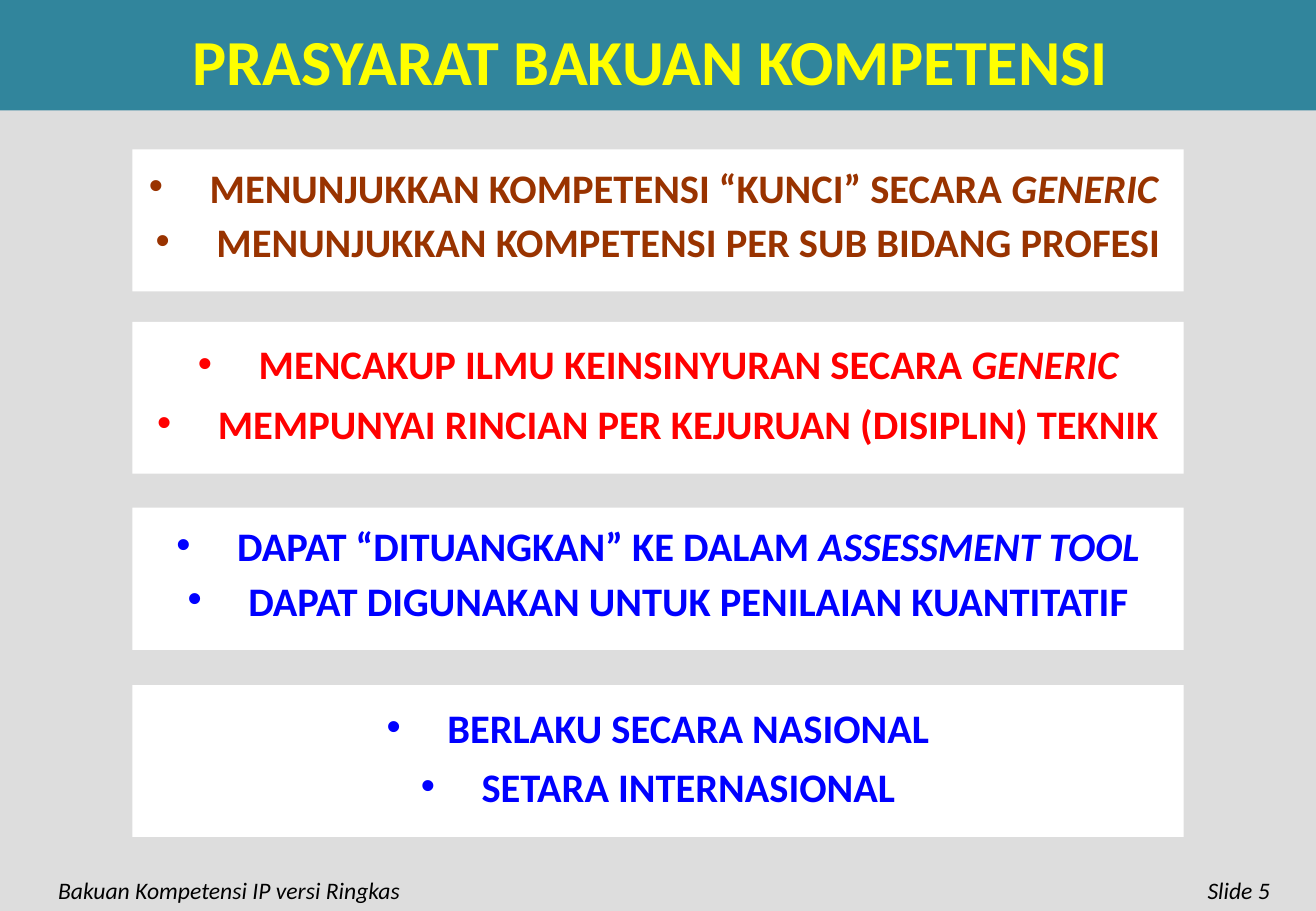
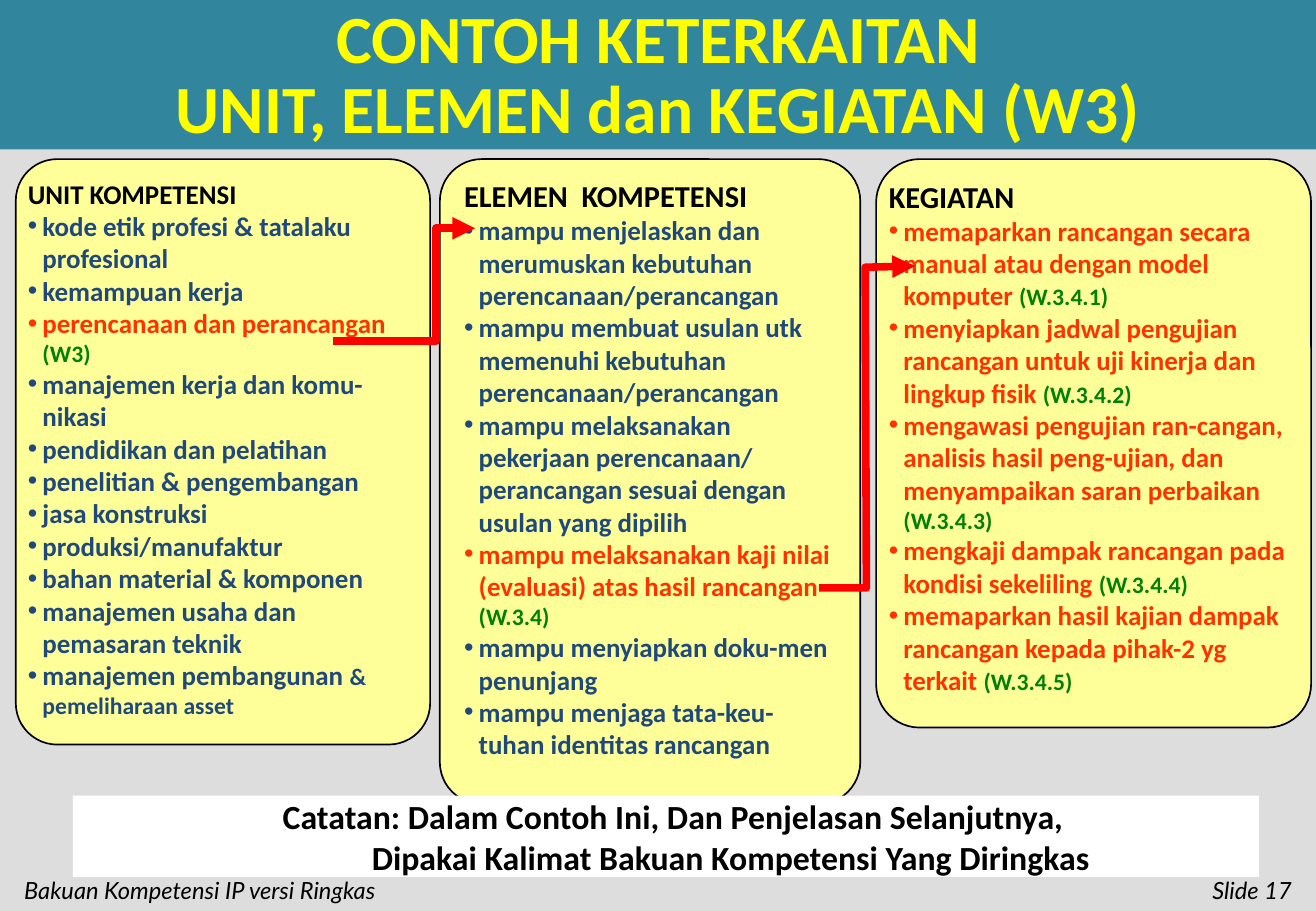
from pptx import Presentation
from pptx.dml.color import RGBColor
from pptx.enum.shapes import MSO_SHAPE as Shape
from pptx.enum.text import MSO_ANCHOR as Anchor, MSO_AUTO_SIZE as AutoSize, PP_ALIGN as Align
from pptx.oxml.ns import qn
from pptx.util import Inches, Pt
from lxml import etree

WIDTH, HEIGHT = 10.83, 7.5
COLORS = dict(
    ground="DDDDDD", band="31859C", title="FFFF00", white="FFFFFF", black="000000",
    brown="993300", red="FF0000", blue="0000FF", card="FFFF99",
    navy="1F497D", orange="FF3300", green="008000",
)
FOOTER = "Bakuan Kompetensi IP versi Ringkas"

# Content: a run is (text, format); a paragraph is a list of runs
ITALIC = dict(italic=True)
CODE = dict(size=14, color="green")
FOCUS = dict(color="orange")

# top, height, line spacing, colour, paragraphs
REQUIREMENTS = [
    (1.23, 1.17, 0.7, "brown", [
        [("MENUNJUKKAN KOMPETENSI “KUNCI” SECARA ", {}), ("GENERIC ", ITALIC)],
        [("MENUNJUKKAN KOMPETENSI PER SUB BIDANG PROFESI", {})]]),
    (2.65, 1.25, 0.8, "red", [
        [("MENCAKUP ILMU KEINSINYURAN SECARA ", {}), ("GENERIC", ITALIC)],
        [("MEMPUNYAI RINCIAN PER KEJURUAN (DISIPLIN) TEKNIK", {})]]),
    (4.18, 1.17, 0.7, "blue", [
        [("DAPAT “DITUANGKAN” KE DALAM ", {}), ("ASSESSMENT TOOL", ITALIC)],
        [("DAPAT DIGUNAKAN UNTUK PENILAIAN KUANTITATIF", {})]]),
    (5.64, 1.25, 0.8, "blue", [
        [("BERLAKU SECARA NASIONAL", {})],
        [("SETARA INTERNASIONAL", {})]]),
]

UNITS = [
    "kode etik profesi & tatalaku profesional",
    "kemampuan kerja",
    [("perencanaan dan perancangan ", FOCUS), ("(W3)", CODE)],
    "manajemen kerja dan komu-nikasi",
    "pendidikan dan pelatihan",
    "penelitian & pengembangan",
    "jasa konstruksi",
    "produksi/manufaktur",
    "bahan material & komponen",
    "manajemen usaha dan pemasaran teknik",
    [("manajemen pembangunan ", {}), ("& pemeliharaan asset", dict(size=14))],
]
ELEMENTS = [
    "mampu menjelaskan dan merumuskan kebutuhan perencanaan/perancangan",
    "mampu membuat usulan utk memenuhi kebutuhan perencanaan/perancangan",
    "mampu melaksanakan pekerjaan perencanaan/ perancangan sesuai dengan usulan yang dipilih",
    [("mampu melaksanakan kaji nilai (evaluasi) atas hasil rancangan ", FOCUS),
     ("(W.3.4)", CODE)],
    "mampu menyiapkan doku-men penunjang",
    "mampu menjaga tata-keu-tuhan identitas rancangan",
]
ACTIVITIES = [
    [(activity + " ", FOCUS), (f"(W.3.4.{number})", CODE)]
    for number, activity in enumerate([
        "memaparkan rancangan secara manual atau dengan model komputer",
        "menyiapkan jadwal pengujian rancangan untuk uji kinerja dan lingkup fisik",
        "mengawasi pengujian ran-cangan, analisis hasil peng-ujian, dan "
        "menyampaikan saran perbaikan",
        "mengkaji dampak rancangan pada kondisi sekeliling",
        "memaparkan hasil kajian dampak rancangan kepada pihak-2 yg terkait",
    ], 1)
]
# heading, heading size, left, width, height, side inset, items
CARD_TOP = 1.31
CARDS = [
    ("UNIT KOMPETENSI", 16, 0.13, 3.41, 4.82, 0, UNITS),
    ("ELEMEN  KOMPETENSI", 18, 3.62, 3.46, 5.31, 0.1, ELEMENTS),
    ("KEGIATAN", 18, 7.21, 3.58, 4.68, 0, ACTIVITIES),
]
LINKS = [
    [(2.74, 2.81), (3.59, 2.81), (3.59, 1.88), (3.91, 1.88)],
    [(6.74, 4.84), (7.13, 4.84), (7.12, 2.2), (7.53, 2.19)],
]
# text, left indent
NOTE = [
    ("Catatan: Dalam Contoh Ini, Dan Penjelasan Selanjutnya,", 0.12),
    ("Dipakai Kalimat Bakuan Kompetensi Yang Diringkas", 1.07),
]


def rgb(name):
    return RGBColor.from_string(COLORS[name])


def write(frame, paragraphs, size, color="black", font="Calibri", bold=False, italic=False,
          align=Align.LEFT, spacing=None, before=0, bullet=False, hang=0,
          anchor=Anchor.TOP, inset=(0.1, 0.05, 0.1, 0.05)):
    """Append paragraphs, each a string or a list of (text, format) runs."""
    frame.word_wrap, frame.auto_size = True, AutoSize.NONE
    frame.vertical_anchor = anchor
    (frame.margin_left, frame.margin_top,
     frame.margin_right, frame.margin_bottom) = map(Inches, inset)
    for runs in paragraphs:
        paragraph = frame.paragraphs[-1]
        if paragraph.runs:
            paragraph = frame.add_paragraph()
        paragraph.alignment = align
        paragraph.space_before = Pt(before)
        if spacing:
            paragraph.line_spacing = spacing
        layout = paragraph._p.get_or_add_pPr()
        layout.set("marL", str(Inches(hang)))
        layout.set("indent", str(-Inches(hang) if bullet or before == 0 else 0))
        if bullet:
            etree.SubElement(layout, qn("a:buFont")).set("typeface", "Arial")
            etree.SubElement(layout, qn("a:buChar")).set("char", "•")
        for text, style in [(runs, {})] if isinstance(runs, str) else runs:
            run = paragraph.add_run()
            run.text = text
            run.font.name = font
            run.font.size = Pt(style.get("size", size))
            run.font.bold = bold
            run.font.italic = style.get("italic", italic)
            run.font.color.rgb = rgb(style.get("color", color))


def panel(slide, kind, box, fill, line=None):
    shape = slide.shapes.add_shape(kind, *map(Inches, box))
    shape.shadow.inherit = False
    shape.fill.solid()
    shape.fill.fore_color.rgb = rgb(fill)
    if line:
        shape.line.color.rgb = rgb(line)
        shape.line.width = Pt(1)
    else:
        shape.line.fill.background()
    return shape


def start_slide(prs, title, size, spacing, band, title_top, title_height,
                number, margin, footer_font):
    """Add a slide with its band, title and footers."""
    slide = prs.slides.add_slide(prs.slide_layouts[5])
    strip = panel(slide, Shape.RECTANGLE, (0, 0, WIDTH, band), "band")
    slide.shapes.element.insert(2, strip.element)
    heading = slide.shapes.title
    heading.left, heading.top, heading.width, heading.height = map(
        Inches, (0, title_top, WIDTH, title_height))
    write(heading.text_frame, title, size, "title", bold=True, align=Align.CENTER,
          spacing=spacing, anchor=Anchor.MIDDLE, inset=(0, 0, 0, 0.16))
    number_width = 1.5
    for text, left, width, align in [
            (FOOTER, margin, 3.75, Align.LEFT),
            (f"Slide {number}", WIDTH - margin - number_width + 0.1 * (margin > 0.2),
             number_width, Align.RIGHT)]:
        box = slide.shapes.add_textbox(*map(Inches, (left, 7.16, width, 0.5)))
        write(box.text_frame, [text], 14, font=footer_font, italic=True, align=align)
    return slide


def link(slide, points):
    corners = [tuple(map(Inches, point)) for point in points]
    builder = slide.shapes.build_freeform(*corners[0])
    builder.add_line_segments(corners[1:], close=False)
    arrow = builder.convert_to_shape()
    arrow.shadow.inherit = False
    arrow.fill.background()
    arrow.line.color.rgb = rgb("red")
    arrow.line.width = Pt(4.5)
    etree.SubElement(arrow.line._get_or_add_ln(), qn("a:tailEnd")).set("type", "triangle")


def requirements_slide(prs):
    slide = start_slide(prs, ["PRASYARAT BAKUAN KOMPETENSI "], 38, 1, 0.91, 0.36, 0.43,
                        5, 0.38, "Calibri")
    for top, height, spacing, color, items in REQUIREMENTS:
        box = panel(slide, Shape.RECTANGLE, (1.09, top, 8.65, height), "white")
        write(box.text_frame, items, 24, color, bold=True, align=Align.CENTER,
              spacing=spacing, before=12, bullet=True, hang=0.5,
              anchor=Anchor.MIDDLE, inset=(0.1, 0.2, 0.1, 0.2))


def relation_slide(prs):
    slide = start_slide(prs, ["CONTOH KETERKAITAN", "UNIT, ELEMEN dan KEGIATAN (W3)"],
                        40, 0.86, 1.23, 0.23, 0.98, 17, 0.1, "Lato")
    # Three cards
    for heading, size, left, width, height, side, items in CARDS:
        card = panel(slide, Shape.ROUNDED_RECTANGLE, (left, CARD_TOP, width, height),
                     "card", "black")
        card.adjustments[0] = 0.1
        shared = dict(bold=True, hang=0.12, inset=(side, 0.05, side, 0.05))
        write(card.text_frame, [heading], size, **shared)
        write(card.text_frame, items, 16, "navy", bullet=True, **shared)
    # Arrows from card to card
    for points in LINKS:
        link(slide, points)
    # Closing note
    note = panel(slide, Shape.RECTANGLE, (0.6, 6.55, 9.76, 0.67), "white")
    for text, indent in NOTE:
        write(note.text_frame, [text], 20, bold=True, align=Align.CENTER,
              anchor=Anchor.MIDDLE, inset=(0, 0, 0, 0))
        note.text_frame.paragraphs[-1]._p.get_or_add_pPr().set("marL", str(Inches(indent)))


def main():
    prs = Presentation()
    prs.slide_width, prs.slide_height = Inches(WIDTH), Inches(HEIGHT)
    ground = prs.slide_master.background.fill
    ground.solid()
    ground.fore_color.rgb = rgb("ground")
    requirements_slide(prs)
    relation_slide(prs)
    prs.save("out.pptx")


if __name__ == "__main__":
    main()
